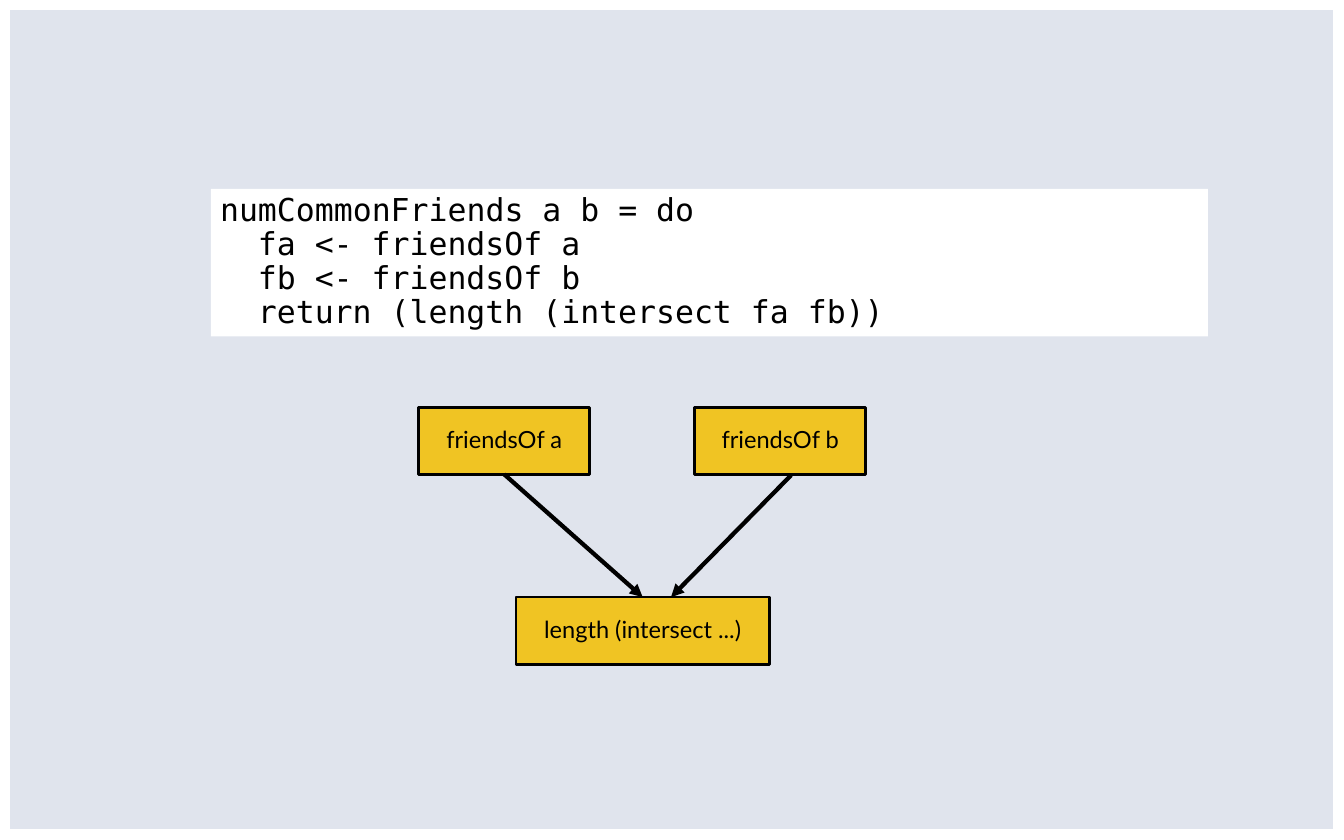
import pptx
import pptx.util
import pptx.dml.color
import pptx.enum.shapes
import pptx.enum.text
import pptx.oxml.ns
import lxml.etree

Inches = pptx.util.Inches
Pt = pptx.util.Pt
Color = pptx.dml.color.RGBColor.from_string
Align = pptx.enum.text.PP_ALIGN

THEME = {
    "background": Color("E0E4ED"),
    "paper": Color("FFFFFF"),
    "node": Color("F0C423"),
    "ink": Color("000000"),
    "code": {"name": "DejaVu Sans Mono", "size": Pt(24)},
    "label": {"name": "Lato", "size": Pt(18)},
    "frame_width": Pt(16),
    "node_width": Pt(2),
    "arrow_width": Pt(3.25),
}


def add_box(bounds, fill, line=None, line_width=None):
    shape = slide.shapes.add_shape(
        pptx.enum.shapes.MSO_SHAPE.RECTANGLE, *map(Inches, bounds)
    )
    shape.shadow.inherit = False
    shape.fill.solid()
    shape.fill.fore_color.rgb = fill
    if line is None:
        shape.line.fill.background()
    else:
        shape.line.color.rgb = line
        shape.line.width = line_width
    return shape


def write_lines(shape, lines, font, alignment, indent=0):
    frame = shape.text_frame
    frame.word_wrap = True
    frame.vertical_anchor = pptx.enum.text.MSO_ANCHOR.MIDDLE
    frame.text = "\n".join(lines)
    for number, paragraph in enumerate(frame.paragraphs):
        paragraph.alignment = alignment
        paragraph.line_spacing = 0.9
        if number and indent:
            paragraph._p.get_or_add_pPr().set("marL", str(Inches(indent)))
        paragraph.font.color.rgb = THEME["ink"]
        for attribute, value in font.items():
            setattr(paragraph.font, attribute, value)


presentation = pptx.Presentation()
presentation.slide_width = Inches(14.22)
presentation.slide_height = Inches(8.89)
slide = presentation.slides.add_slide(presentation.slide_layouts[6])
slide.background.fill.solid()
slide.background.fill.fore_color.rgb = THEME["background"]

add_box((0, 0, 14.22, 8.89), THEME["background"], THEME["paper"], THEME["frame_width"])

code_box = add_box((2.23, 2, 10.55, 1.56), THEME["paper"])
code_lines = [
    "numCommonFriends a b = do",
    "fa <- friendsOf a",
    "fb <- friendsOf b",
    "return (length (intersect fa fb))",
]
write_lines(code_box, code_lines, THEME["code"], Align.LEFT, indent=0.4)

nodes = {}
for label, left, top, width in [
    ("friendsOf a", 4.43, 4.31, 1.81),
    ("friendsOf b", 7.35, 4.31, 1.81),
    ("length (intersect ...)", 5.46, 6.32, 2.68),
]:
    node = add_box(
        (left, top, width, 0.71), THEME["node"], THEME["ink"], THEME["node_width"]
    )
    write_lines(node, [label], THEME["label"], Align.CENTER)
    nodes[label] = node

arrows = []
for points in [(5.34, 5.02, 6.8, 6.32), (8.37, 5.03, 7.1, 6.32)]:
    arrow = slide.shapes.add_connector(
        pptx.enum.shapes.MSO_CONNECTOR.STRAIGHT, *map(Inches, points)
    )
    arrow.line.color.rgb = THEME["ink"]
    arrow.line.width = THEME["arrow_width"]
    lxml.etree.SubElement(
        arrow.line._get_or_add_ln(), pptx.oxml.ns.qn("a:tailEnd"), type="triangle"
    )
    lxml.etree.SubElement(arrow._element.spPr, pptx.oxml.ns.qn("a:effectLst"))
    arrows.append(arrow)

arrows[0].begin_connect(nodes["friendsOf a"], 2)
arrows[0].end_connect(nodes["length (intersect ...)"], 0)

presentation.save("out.pptx")
